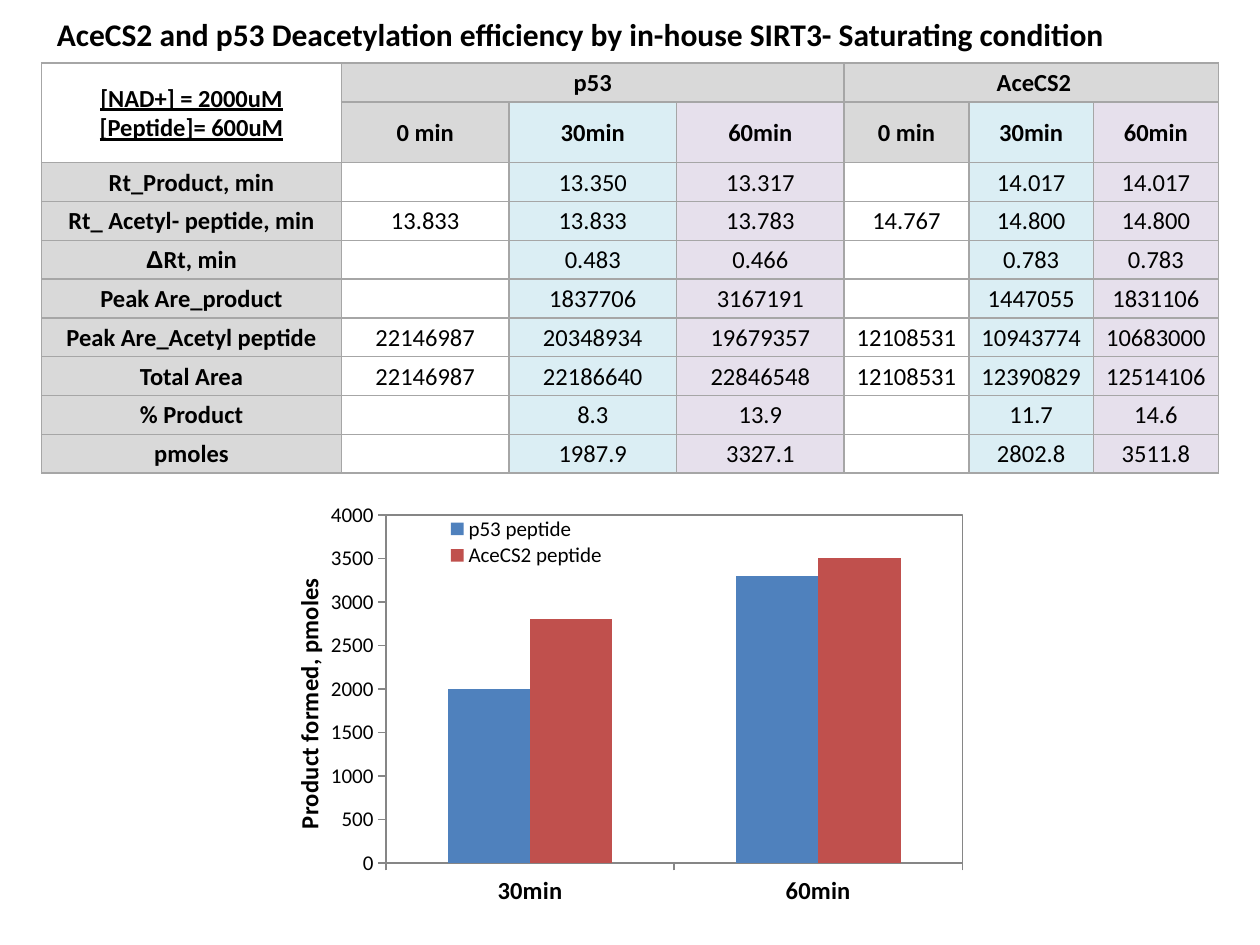
"""Builds the SIRT3 deacetylation efficiency slide."""
from lxml.etree import SubElement
from pptx import Presentation
from pptx.chart.data import CategoryChartData
from pptx.dml.color import RGBColor
from pptx.enum.chart import XL_CHART_TYPE, XL_LEGEND_POSITION, XL_TICK_MARK
from pptx.enum.text import MSO_ANCHOR, MSO_AUTO_SIZE, PP_ALIGN
from pptx.oxml import parse_xml
from pptx.oxml.ns import nsdecls, qn
from pptx.util import Inches, Pt

BLACK = RGBColor(0x00, 0x00, 0x00)
GREY = RGBColor(0xD9, 0xD9, 0xD9)
AQUA = RGBColor(0xDB, 0xEE, 0xF4)
LILAC = RGBColor(0xE6, 0xE0, 0xEC)
BORDER = RGBColor(0xA6, 0xA6, 0xA6)
AXIS = RGBColor(0x86, 0x86, 0x86)
BLUE = RGBColor(0x4F, 0x81, 0xBD)
RED = RGBColor(0xC0, 0x50, 0x4D)

TIMES = ["0 min", "30min", "60min"]
TIME_FILLS = [None, AQUA, LILAC]
COLUMN_WIDTHS = [2.38] + [1.33] * 3 + [0.99] * 3
TABLE_HEIGHT = 3.08
MEASUREMENTS = [
    ("Rt_Product, min", "", "13.350", "13.317", "", "14.017", "14.017"),
    ("Rt_ Acetyl- peptide, min", "13.833", "13.833", "13.783", "14.767", "14.800", "14.800"),
    ("ΔRt, min", "", "0.483", "0.466", "", "0.783", "0.783"),
    ("Peak Are_product", "", "1837706", "3167191", "", "1447055", "1831106"),
    ("Peak Are_Acetyl peptide", "22146987", "20348934", "19679357",
     "12108531", "10943774", "10683000"),
    ("Total Area", "22146987", "22186640", "22846548", "12108531", "12390829", "12514106"),
    ("% Product", "", "8.3", "13.9", "", "11.7", "14.6"),
    ("pmoles", "", "1987.9", "3327.1", "", "2802.8", "3511.8"),
]
PRODUCT_FORMED = [
    ("p53 peptide", (2000, 3300), BLUE),
    ("AceCS2 peptide", (2800, 3500), RED),
]


def style_font(font, size, bold=False, name="Calibri"):
    """Set the face, size, weight and colour of a font."""
    font.name, font.size, font.bold = name, Pt(size), bold
    font.color.rgb = BLACK


def write(frame, text, size=14, bold=False, underline=False):
    """Fill a text frame with centred lines, setting the delta in Arial."""
    for number, line in enumerate(text.split("\n")):
        paragraph = frame.add_paragraph() if number else frame.paragraphs[0]
        paragraph.alignment = PP_ALIGN.CENTER
        symbol = "Δ" if line.startswith("Δ") else ""
        for piece, face in ((symbol, "Arial"), (line[len(symbol):], "Calibri")):
            if piece:
                run = paragraph.add_run()
                run.text = piece
                style_font(run.font, size, bold, face)
                run.font.underline = underline
        if not line:
            SubElement(paragraph._p, qn("a:endParaRPr"), sz=str(size * 100))


def add_borders(cell):
    """Draw a thin grey line on each side of a cell."""
    properties = cell._tc.get_or_add_tcPr()
    for position, side in enumerate(("lnL", "lnR", "lnT", "lnB")):
        properties.insert(position, parse_xml(
            f'<a:{side} {nsdecls("a")} w="12700"><a:solidFill>'
            f'<a:srgbClr val="{BORDER}"/></a:solidFill></a:{side}>'))


def fill_cell(cell, text="", fill=None, **text_format):
    """Set the text, fill, margins and borders of a table cell."""
    cell.margin_left = cell.margin_right = cell.margin_top = Inches(0.01)
    cell.margin_bottom = 0
    cell.vertical_anchor = MSO_ANCHOR.MIDDLE
    if fill is None:
        cell.fill.background()
    else:
        cell.fill.solid()
        cell.fill.fore_color.rgb = fill
    add_borders(cell)
    write(cell.text_frame, text, **text_format)


def add_title(slide, text):
    """Add the heading above the table."""
    title = slide.shapes.add_textbox(Inches(0.31), Inches(0.07), Inches(8.6), Inches(0.4))
    title.text_frame.word_wrap = False
    title.text_frame.auto_size = MSO_AUTO_SIZE.SHAPE_TO_FIT_TEXT
    write(title.text_frame, text, size=18, bold=True)


def add_measurements(slide):
    """Add the table of retention times, peak areas and yields."""
    row_count = len(MEASUREMENTS) + 2
    table = slide.shapes.add_table(
        row_count, len(COLUMN_WIDTHS), Inches(0.33), Inches(0.5),
        Inches(sum(COLUMN_WIDTHS)), Inches(TABLE_HEIGHT)).table
    table.first_row = table.horz_banding = False
    for column, width in zip(table.columns, COLUMN_WIDTHS):
        column.width = Inches(width)

    conditions = "[NAD+] = 2000uM\n[Peptide]= 600uM"
    fill_cell(table.cell(0, 0), conditions, bold=True, underline=True)
    fill_cell(table.cell(1, 0))
    peptides = ["p53", "", "", "\u00a0AceCS2", "", ""]
    for column, peptide in enumerate(peptides, start=1):
        time = (column - 1) % 3
        fill_cell(table.cell(0, column), peptide, GREY, bold=True)
        fill_cell(table.cell(1, column), TIMES[time], TIME_FILLS[time] or GREY, bold=True)
    for row, (label, *values) in enumerate(MEASUREMENTS, start=2):
        fill_cell(table.cell(row, 0), label, GREY, bold=True)
        for column, value in enumerate(values, start=1):
            fill_cell(table.cell(row, column), value, TIME_FILLS[(column - 1) % 3])

    table.cell(0, 0).merge(table.cell(1, 0))
    for first in (1, 4):
        table.cell(0, first).merge(table.cell(0, first + 2))


def place(element, position, *box, inner=False):
    """Give a chart part a fixed x, y, width and height, in fractions of the chart."""
    for old in element.findall(qn("c:layout")):
        element.remove(old)
    target = '<c:layoutTarget val="inner"/>' if inner else ""
    sizes = "".join(f'<c:{key} val="{value}"/>' for key, value in zip("xywh", box))
    element.insert(position, parse_xml(
        f'<c:layout {nsdecls("c")}><c:manualLayout>{target}<c:xMode val="edge"/>'
        f'<c:yMode val="edge"/>{sizes}</c:manualLayout></c:layout>'))


def style_axis(axis, size, bold=False):
    """Set the labels, ticks and line of an axis."""
    axis.has_major_gridlines = False
    axis.major_tick_mark = XL_TICK_MARK.OUTSIDE
    axis.format.line.color.rgb = AXIS
    style_font(axis.tick_labels.font, size, bold)


def add_product_chart(slide):
    """Add the column chart of product formed over time."""
    data = CategoryChartData()
    data.categories = TIMES[1:]
    for name, values, _ in PRODUCT_FORMED:
        data.add_series(name, values)
    chart = slide.shapes.add_chart(
        XL_CHART_TYPE.COLUMN_CLUSTERED, Inches(2.17), Inches(3.92),
        Inches(5.58), Inches(3.33), data).chart
    style_font(chart.font, 10)
    chart.has_title = False

    columns = chart.plots[0]
    columns.gap_width, columns.overlap = 150, 0
    columns.vary_by_categories = False
    for series, (_, _, color) in zip(columns.series, PRODUCT_FORMED):
        series.format.fill.solid()
        series.format.fill.fore_color.rgb = color

    style_axis(chart.category_axis, 14, bold=True)
    amount = chart.value_axis
    style_axis(amount, 12)
    amount.minimum_scale, amount.maximum_scale, amount.major_unit = 0, 4000, 500
    amount.tick_labels.number_format = "General"
    amount.tick_labels.number_format_is_linked = False
    write(amount.axis_title.text_frame, "Product formed, pmoles", bold=True)
    place(amount.axis_title._element, 1, 0.02, 0.19)

    chart.has_legend = True
    legend = chart.legend
    legend.position = XL_LEGEND_POSITION.RIGHT
    legend.include_in_layout = False
    style_font(legend.font, 12)
    place(legend._element, 1, 0.21, 0.05, 0.3, 0.13)

    plot_area = chart._chartSpace.chart.plotArea
    place(plot_area, 0, 0.16, 0.05, 0.82, 0.83, inner=True)
    plot_area.append(parse_xml(
        f'<c:spPr {nsdecls("c", "a")}><a:noFill/><a:ln w="9525"><a:solidFill>'
        f'<a:srgbClr val="{AXIS}"/></a:solidFill></a:ln></c:spPr>'))


def main():
    """Build and save the slide."""
    deck = Presentation()
    deck.slide_width, deck.slide_height = Inches(10), Inches(7.5)
    slide = deck.slides.add_slide(deck.slide_layouts[6])
    add_measurements(slide)
    add_title(slide, "AceCS2 and p53 Deacetylation efficiency by in-house SIRT3- "
                     "Saturating condition")
    add_product_chart(slide)
    deck.save("out.pptx")


if __name__ == "__main__":
    main()
